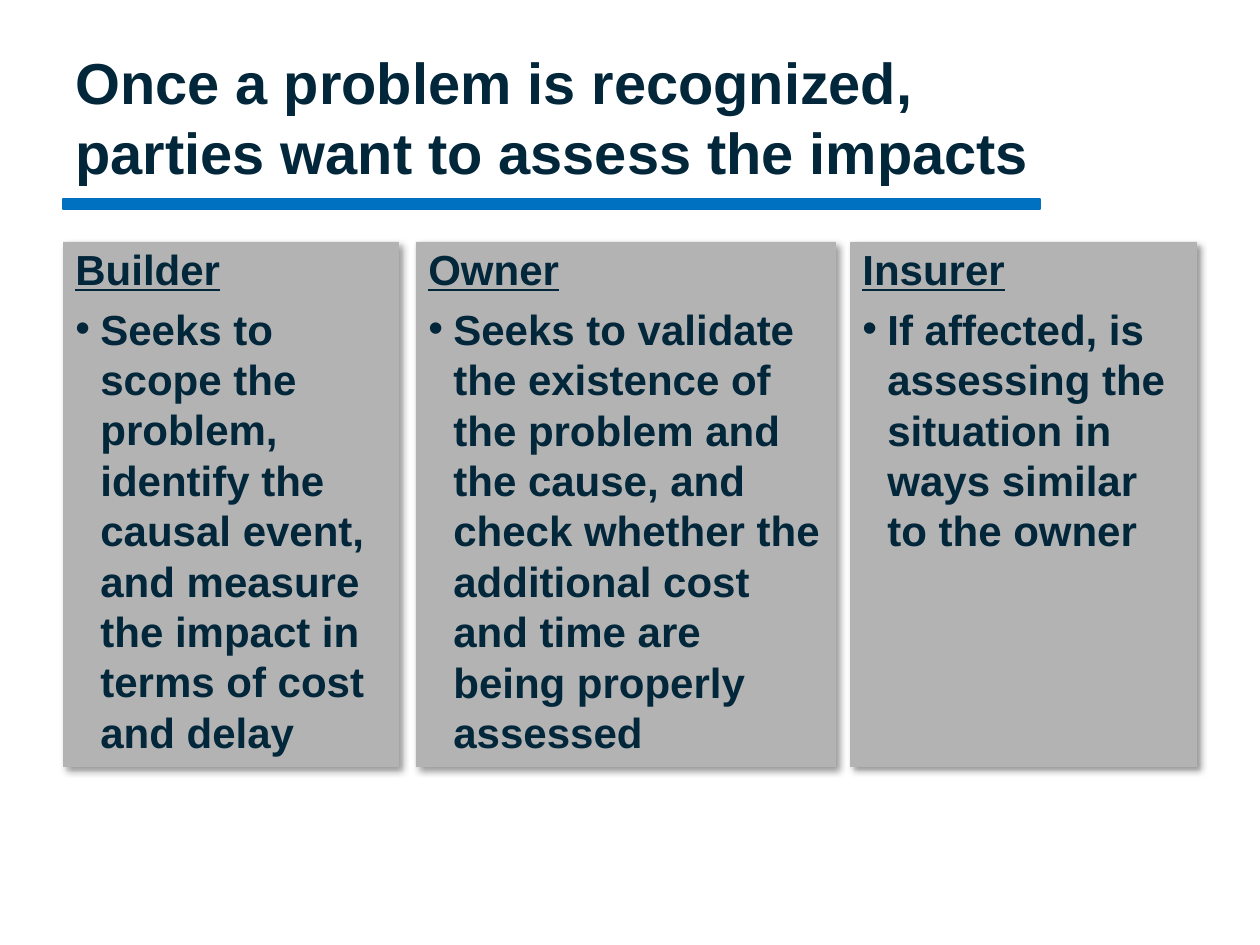
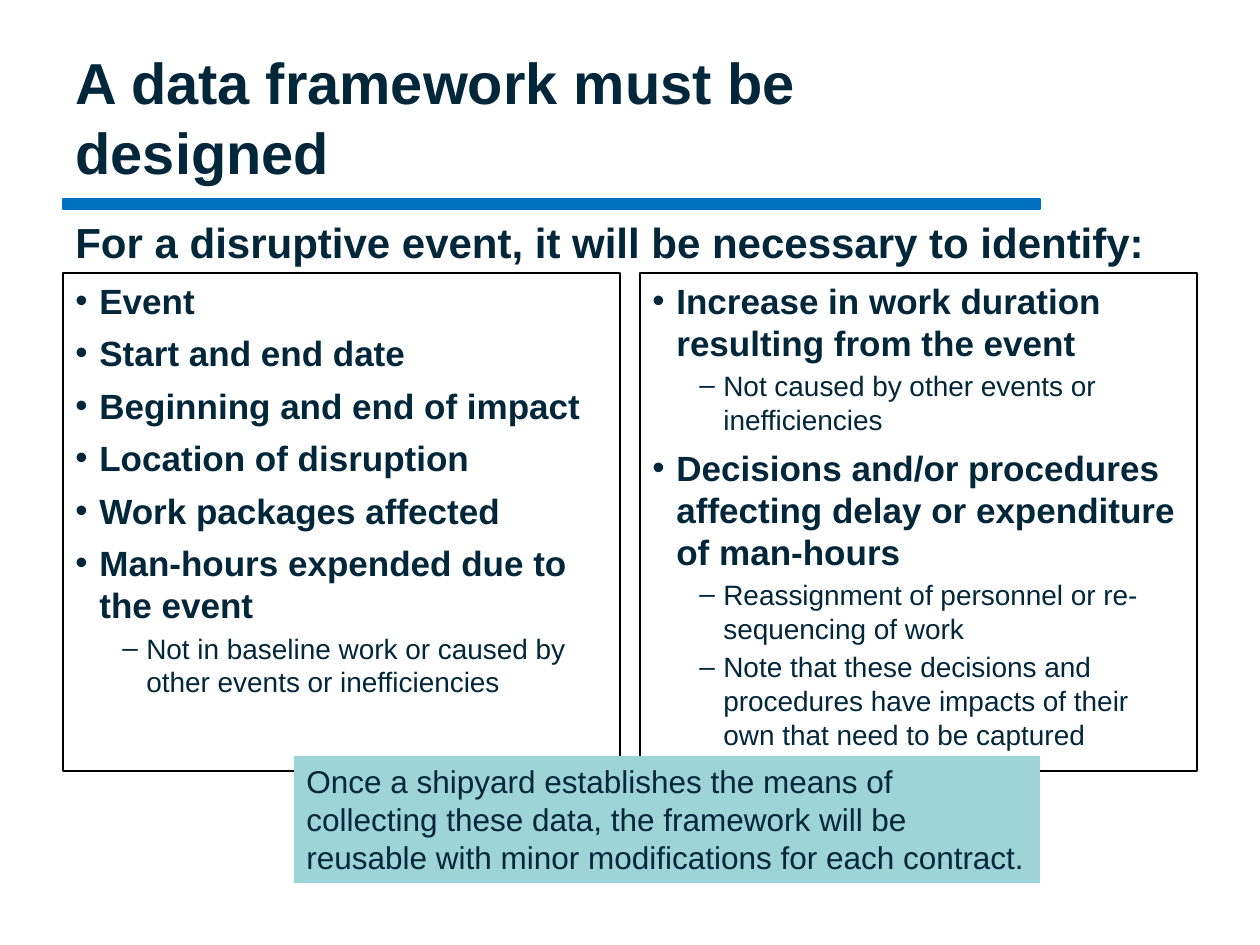
from lxml.etree import SubElement
from pptx import Presentation
from pptx.dml.color import RGBColor
from pptx.enum.shapes import MSO_SHAPE as Preset
from pptx.enum.text import MSO_ANCHOR as Anchor, MSO_AUTO_SIZE as AutoSize, PP_ALIGN as Align
from pptx.oxml.ns import qn
from pptx.util import Emu, Pt

PX_PER_INCH = 126
FONT = "Arial"
INK = RGBColor(0x02, 0x26, 0x3A)
BLUE = RGBColor(0x00, 0x70, 0xC0)
GREY = RGBColor(0xB3, 0xB3, 0xB3)
TEAL = RGBColor(0x9E, 0xD3, 0xD7)
BLACK = RGBColor(0x00, 0x00, 0x00)

LEFT, CONTENT_WIDTH = 63, 1134
TITLE_BOX = (LEFT, 38, 987, 157)
RULE_BOX = (LEFT, 199, 977, 10)

# Slide 1: left, width, heading width, body height, heading, body
PARTIES = [
    (63, 336, 284, 406, "Builder",
     "Seeks to scope the problem, identify the causal event, and measure "
     "the impact in terms of cost and delay"),
    (416, 420, 315, 437, "Owner",
     "Seeks to validate the existence of the problem and the cause, and check "
     "whether the additional cost and time are being properly assessed"),
    (850, 347, 294, 437, "Insurer",
     "If affected, is assessing the situation in ways similar to the owner"),
]

# Slide 2: level and text of each item, by panel
IDENTIFY_PANELS = [
    [(0, "Event"),
     (0, "Start and end date"),
     (0, "Beginning and end of impact"),
     (0, "Location of disruption"),
     (0, "Work packages affected"),
     (0, "Man-hours expended due to the event"),
     (1, "Not in baseline work or caused by other events or inefficiencies")],
    [(0, "Increase in work duration resulting from the event"),
     (1, "Not caused by other events or inefficiencies"),
     (0, "Decisions and/or procedures affecting delay or expenditure of man-hours"),
     (1, "Reassignment of personnel or re-sequencing of work"),
     (1, "Note that these decisions and procedures have impacts of their own "
         "that need to be captured")],
]


def px(length):
    return Emu(round(length * 914400 / PX_PER_INCH))


def emu_box(box):
    return [px(length) for length in box]


def add_run(paragraph, text, size, bold=False, underline=None):
    paragraph.alignment = Align.LEFT
    run = paragraph.add_run()
    run.text = text
    font = run.font
    font.name, font.size, font.bold, font.underline = FONT, Pt(size), bold, underline
    font.color.rgb = INK


def set_bullet(paragraph, character, margin, hang):
    properties = paragraph._p.get_or_add_pPr()
    properties.set("marL", str(px(margin)))
    properties.set("indent", str(-px(hang)))
    SubElement(properties, qn("a:buFont")).set("typeface", FONT)
    SubElement(properties, qn("a:buChar")).set("char", character)


def set_frame(shape, anchor=Anchor.TOP):
    frame = shape.text_frame
    frame.word_wrap = True
    frame.auto_size = AutoSize.NONE
    frame.vertical_anchor = anchor
    return frame


def add_text_box(slide, box, anchor=Anchor.TOP):
    return set_frame(slide.shapes.add_textbox(*emu_box(box)), anchor).paragraphs[0]


def add_rectangle(slide, box, fill=None, line=None):
    shape = slide.shapes.add_shape(Preset.RECTANGLE, *emu_box(box))
    shape.shadow.inherit = False
    if fill is None:
        shape.fill.background()
    else:
        shape.fill.solid()
        shape.fill.fore_color.rgb = fill
    if line is None:
        shape.line.fill.background()
    else:
        shape.line.color.rgb = line
        shape.line.width = Pt(0.75)
    return shape


def add_drop_shadow(shape):
    effects = shape._element.spPr.find(qn("a:effectLst"))
    shadow = SubElement(effects, qn("a:outerShdw"), blurRad=str(Pt(4)), dist=str(Pt(3)),
                        dir=str(45 * 60000), algn="tl", rotWithShape="0")
    color = SubElement(shadow, qn("a:srgbClr"), val=str(BLACK))
    SubElement(color, qn("a:alpha"), val="40000")


def add_titled_slide(presentation, title_text):
    """Title with the blue rule below it."""
    slide = presentation.slides.add_slide(presentation.slide_layouts[5])
    add_rectangle(slide, RULE_BOX, BLUE, BLUE)
    title = slide.shapes.title
    title.left, title.top, title.width, title.height = emu_box(TITLE_BOX)
    add_run(set_frame(title, Anchor.MIDDLE).paragraphs[0], title_text, 33, bold=True)
    return slide


def add_party_column(slide, box, heading_width, body_height, heading, body):
    left, top, width, height = box
    add_drop_shadow(add_rectangle(slide, box, GREY))
    # Bulleted body
    paragraph = add_text_box(slide, (left, top + 55, width, body_height))
    set_bullet(paragraph, "•", 25, 25)
    add_run(paragraph, body, 24, bold=True)
    # Underlined heading
    paragraph = add_text_box(slide, (left, top - 30, heading_width, 88), Anchor.BOTTOM)
    add_run(paragraph, heading, 24, bold=True, underline=True)


def add_bullet_panel(slide, box, items):
    frame = set_frame(add_rectangle(slide, box, line=BLACK))
    for index, (level, text) in enumerate(items):
        paragraph = frame.add_paragraph() if index else frame.paragraphs[0]
        paragraph.level = level
        set_bullet(paragraph, "–" if level else "•", 71 if level else 24, 24)
        if index:
            paragraph.space_before = Pt(3 if level else 6)
        add_run(paragraph, text, 16 if level else 20, bold=not level)


def build_impacts_slide(presentation):
    slide = add_titled_slide(
        presentation, "Once a problem is recognized, parties want to assess the impacts")
    for left, width, *content in PARTIES:
        add_party_column(slide, (left, 242, width, 525), *content)


def build_framework_slide(presentation):
    slide = add_titled_slide(presentation, "A data framework must be designed")
    # Lead-in
    add_run(add_text_box(slide, (LEFT, 210, CONTENT_WIDTH, 63)),
            "For a disruptive event, it will be necessary to identify:", 24, bold=True)
    # Two equal panels
    gap = 20
    width = (CONTENT_WIDTH - gap) // 2
    for column, items in enumerate(IDENTIFY_PANELS):
        add_bullet_panel(slide, (LEFT + column * (width + gap), 273, width, 498), items)
    # Closing note
    note = add_rectangle(slide, (294, 756, 746, 127), TEAL)
    add_run(set_frame(note).paragraphs[0],
            "Once a shipyard establishes the means of collecting these data, the framework "
            "will be reusable with minor modifications for each contract.", 18)


def main():
    presentation = Presentation()
    presentation.slide_width, presentation.slide_height = px(1260), px(945)
    build_impacts_slide(presentation)
    build_framework_slide(presentation)
    presentation.save("out.pptx")


if __name__ == "__main__":
    main()
